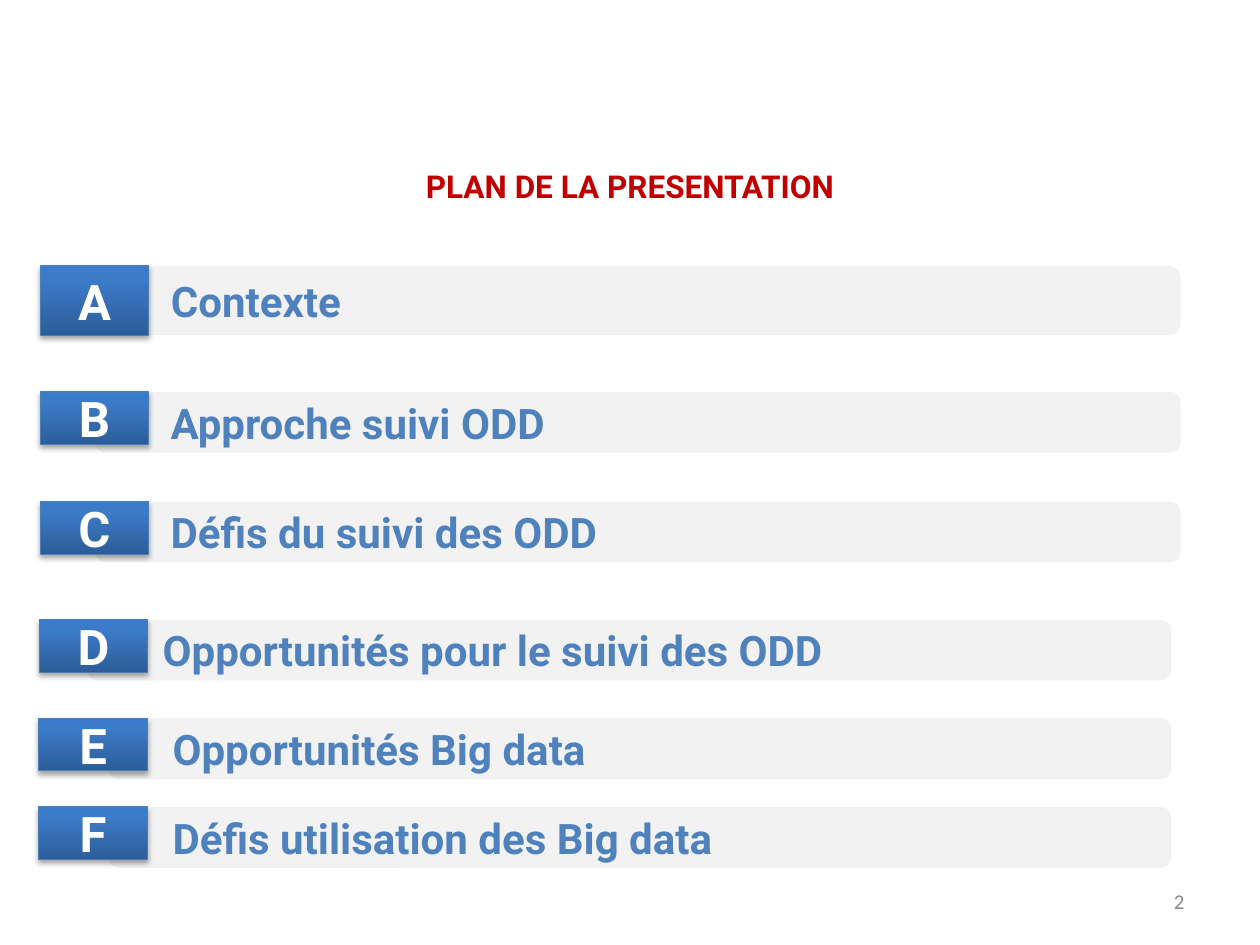
from dataclasses import dataclass

from lxml.etree import SubElement
from pptx import Presentation
from pptx.dml.color import RGBColor
from pptx.enum.shapes import MSO_SHAPE
from pptx.enum.text import MSO_ANCHOR, PP_ALIGN
from pptx.oxml import parse_xml
from pptx.oxml.ns import nsdecls, qn
from pptx.util import Pt


@dataclass(frozen=True)
class Theme:
    font: str = "Roboto"
    number_font: str = "Calibri"
    title: str = "C00000"
    bar: str = "F2F2F2"
    label: str = "4F81BD"
    letter: str = "FFFFFF"
    badge_line: str = "4A7EBB"
    badge_stops: tuple = ((0, "2C5D98"), (80, "3C7BC7"), (100, "3A7CCB"))
    shadow: str = "000000"
    number: str = "898989"
    title_size: int = 18
    label_size: int = 24
    letter_size: int = 28
    number_size: int = 12


@dataclass(frozen=True)
class Section:
    letter: str
    label: str
    top: float
    bar_left: float = 54.72
    bar_right: float = 674.64
    bar_height: float = 34.7
    badge_left: float = 23
    badge_height: float = 30
    indent: float = 34


THEME = Theme()
BADGE_WIDTH = 62

SECTIONS = [
    Section("A", "Contexte", 152, bar_height=39.4, badge_height=39.6),
    Section("B", "Approche suivi ODD", 224),
    Section("C", "Défis du suivi des ODD", 286.7),
    Section("D", "Opportunités pour le suivi des ODD", 354.2,
            bar_left=50.2, bar_right=669.2, badge_left=22.4),
    Section("E", "Opportunités Big data", 410.5,
            bar_left=61.9, bar_right=669.2, badge_left=22.2, indent=28),
    Section("F", "Défis utilisation des Big data", 461.2,
            bar_left=61.9, bar_right=669.2, badge_left=22.2, indent=28),
]


def write(sp, text: str, size: int, color: str, align: PP_ALIGN,
          font: str = THEME.font, bold: bool = True) -> None:
    tf = sp.text_frame
    tf.word_wrap = True
    tf.vertical_anchor = MSO_ANCHOR.MIDDLE
    p = tf.paragraphs[0]
    p.alignment = align
    r = p.add_run()
    r.text = text
    r.font.name = font
    r.font.size = Pt(size)
    r.font.bold = bold
    r.font.color.rgb = RGBColor.from_string(color)


def add_box(slide, left: float, top: float, width: float, height: float):
    sp = slide.shapes.add_shape(MSO_SHAPE.ROUNDED_RECTANGLE,
                                Pt(left), Pt(top), Pt(width), Pt(height))
    sp.shadow.inherit = False
    return sp


def add_bar(slide, section: Section) -> None:
    sp = add_box(slide, section.bar_left, section.top,
                 section.bar_right - section.bar_left, section.bar_height)
    sp.fill.solid()
    sp.fill.fore_color.rgb = RGBColor.from_string(THEME.bar)
    sp.line.fill.background()
    write(sp, section.label, THEME.label_size, THEME.label, PP_ALIGN.LEFT)
    pPr = sp.text_frame.paragraphs[0]._p.get_or_add_pPr()
    pPr.set("marL", str(Pt(section.indent)))
    pPr.set("indent", "0")


def add_badge(slide, section: Section) -> None:
    sp = add_box(slide, section.badge_left, section.top, BADGE_WIDTH, section.badge_height)
    sp.adjustments[0] = 0
    sp.line.color.rgb = RGBColor.from_string(THEME.badge_line)
    sp.line.width = Pt(0.75)
    shade(sp)
    drop_shadow(sp)
    write(sp, section.letter, THEME.letter_size, THEME.letter, PP_ALIGN.CENTER)


def shade(sp) -> None:
    """Fill the shape with the badge gradient, darkest at the bottom."""
    stops = "".join(f'<a:gs pos="{pos * 1000}"><a:srgbClr val="{color}"/></a:gs>'
                    for pos, color in THEME.badge_stops)
    grad = parse_xml(f'<a:gradFill {nsdecls("a")} rotWithShape="1"><a:gsLst>{stops}</a:gsLst>'
                     '<a:lin ang="16200000" scaled="0"/></a:gradFill>')
    sp._element.spPr.find(qn("a:prstGeom")).addnext(grad)


def drop_shadow(sp) -> None:
    effects = sp._element.spPr.find(qn("a:effectLst"))
    shadow = SubElement(effects, qn("a:outerShdw"), blurRad=str(Pt(3.15)),
                        dist=str(Pt(1.8)), dir="5400000", rotWithShape="0")
    color = SubElement(shadow, qn("a:srgbClr"), val=THEME.shadow)
    SubElement(color, qn("a:alpha"), val="35000")


def main() -> None:
    prs = Presentation()
    prs.slide_width, prs.slide_height = Pt(720), Pt(540)
    slide = prs.slides.add_slide(prs.slide_layouts[5])

    title = slide.shapes.title
    title.left, title.top, title.width, title.height = Pt(36), Pt(78.5), Pt(648), Pt(56)
    write(title, "PLAN DE LA PRESENTATION", THEME.title_size, THEME.title, PP_ALIGN.CENTER)

    for section in SECTIONS:
        add_bar(slide, section)
        add_badge(slide, section)

    number = slide.shapes.add_textbox(Pt(516), Pt(500.5), Pt(168), Pt(28.8))
    write(number, "2", THEME.number_size, THEME.number, PP_ALIGN.RIGHT,
          font=THEME.number_font, bold=False)

    prs.save("out.pptx")


if __name__ == "__main__":
    main()
